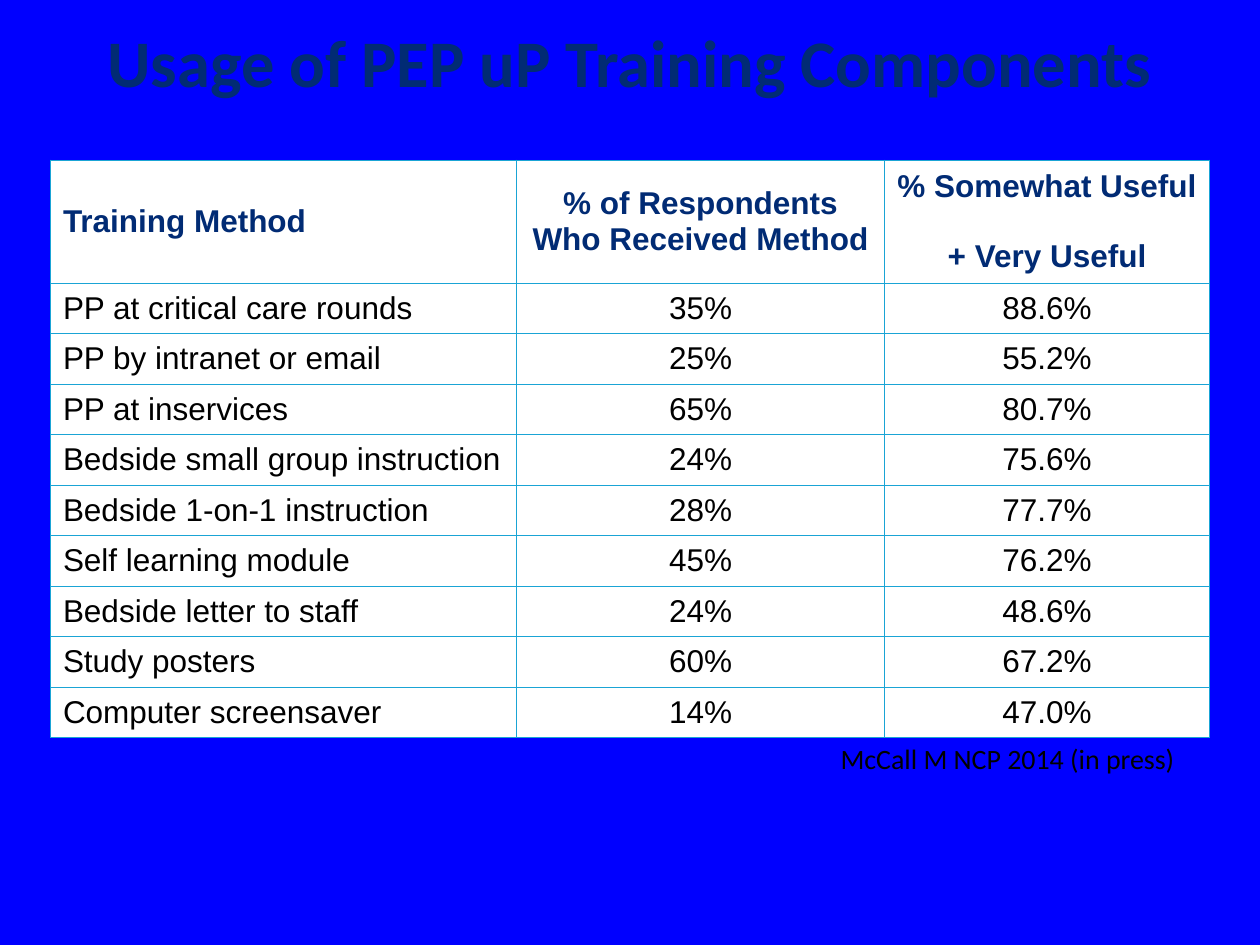
from dataclasses import dataclass

from lxml import etree
from pptx import Presentation
from pptx.dml.color import RGBColor
from pptx.enum import text as t
from pptx.oxml.ns import qn
from pptx.util import Inches, Pt

LEFT, MID, RIGHT = t.PP_ALIGN.LEFT, t.PP_ALIGN.CENTER, t.PP_ALIGN.RIGHT


@dataclass(frozen=True)
class Font:
    name: str
    size: int
    color: str
    bold: bool = False


@dataclass(frozen=True)
class Theme:
    back: str = "0000FF"
    cell: str = "FFFFFF"
    rule: str = "1AA4D5"
    rule_pt: float = 0.5
    title: Font = Font("Calibri", 38, "012B74", True)
    head: Font = Font("Arial", 18, "012B74", True)
    body: Font = Font("Arial", 18, "000000")
    note: Font = Font("Calibri", 16, "000000")


@dataclass(frozen=True)
class Label:
    lines: tuple[str, ...]
    font: Font
    align: t.PP_ALIGN = MID
    gap: float = 0  # points before each line after the first
    pitch: float = 1.0


@dataclass(frozen=True)
class Method:
    name: str
    got: str
    useful: str


THEME = Theme()
WIDTHS = (3.7, 2.92, 2.58)
HEAD_H, ROW_H = 0.94, 0.38
HEADS = (
    Label(("Training Method",), THEME.head, LEFT),
    Label(("% of Respondents", "Who Received Method"), THEME.head),
    Label(("% Somewhat Useful", "+ Very Useful"), THEME.head, gap=20),
)
METHODS = (
    Method("PP at critical care rounds", "35%", "88.6%"),
    Method("PP by intranet or email", "25%", "55.2%"),
    Method("PP at inservices", "65%", "80.7%"),
    Method("Bedside small group instruction", "24%", "75.6%"),
    Method("Bedside 1-on-1 instruction", "28%", "77.7%"),
    Method("Self learning module", "45%", "76.2%"),
    Method("Bedside letter to staff", "24%", "48.6%"),
    Method("Study posters", "60%", "67.2%"),
    Method("Computer screensaver", "14%", "47.0%"),
)


def write(frame, label: Label) -> None:
    for i, line in enumerate(label.lines):
        para = frame.add_paragraph() if i else frame.paragraphs[0]
        para.alignment = label.align
        para.line_spacing = label.pitch
        if i and label.gap:
            para.space_before = Pt(label.gap)
        run = para.add_run()
        run.text = line
        font = run.font
        font.name, font.bold = label.font.name, label.font.bold
        font.size = Pt(label.font.size)
        font.color.rgb = RGBColor.from_string(label.font.color)


def add_text(slide, box: tuple[float, ...], label: Label) -> None:
    frame = slide.shapes.add_textbox(*map(Inches, box)).text_frame
    frame.word_wrap = True
    frame.vertical_anchor = t.MSO_ANCHOR.MIDDLE
    write(frame, label)


def rule(cell) -> None:
    """Draw a thin line on all four sides; lines precede the fill."""
    props = cell._tc.get_or_add_tcPr()
    for i, side in enumerate(("lnL", "lnR", "lnT", "lnB")):
        line = etree.Element(qn(f"a:{side}"), w=str(Pt(THEME.rule_pt)))
        fill = etree.SubElement(line, qn("a:solidFill"))
        etree.SubElement(fill, qn("a:srgbClr"), val=THEME.rule)
        props.insert(i, line)


def add_cell(cell, label: Label) -> None:
    cell.fill.solid()
    cell.fill.fore_color.rgb = RGBColor.from_string(THEME.cell)
    cell.vertical_anchor = t.MSO_ANCHOR.MIDDLE
    cell.margin_left = cell.margin_right = Inches(0.1)
    cell.margin_top = cell.margin_bottom = Inches(0.05)
    write(cell.text_frame, label)
    rule(cell)


def add_grid(slide, left: float, top: float) -> None:
    body = [
        (Label((m.name,), THEME.body, LEFT), Label((m.got,), THEME.body),
         Label((m.useful,), THEME.body))
        for m in METHODS
    ]
    rows = [HEADS, *body]
    high = HEAD_H + ROW_H * len(body)
    grid = slide.shapes.add_table(
        len(rows), len(WIDTHS), Inches(left), Inches(top),
        Inches(sum(WIDTHS)), Inches(high)).table
    for col, width in zip(grid.columns, WIDTHS):
        col.width = Inches(width)
    for r, labels in enumerate(rows):
        grid.rows[r].height = Inches(ROW_H if r else HEAD_H)
        for c, label in enumerate(labels):
            add_cell(grid.cell(r, c), label)


def main() -> None:
    deck = Presentation()
    deck.slide_width, deck.slide_height = Inches(10), Inches(7.5)
    slide = deck.slides.add_slide(deck.slide_layouts[6])
    fill = slide.background.fill
    fill.solid()
    fill.fore_color.rgb = RGBColor.from_string(THEME.back)
    add_text(slide, (0, 0.18, 10, 0.7), Label(
        ("Usage of PEP uP Training Components",), THEME.title, pitch=0.85))
    add_grid(slide, 0.4, 1.27)
    add_text(slide, (6.25, 5.83, 3.17, 0.37), Label(
        ("McCall M NCP 2014 (in press)",), THEME.note, RIGHT))
    deck.save("out.pptx")


if __name__ == "__main__":
    main()
